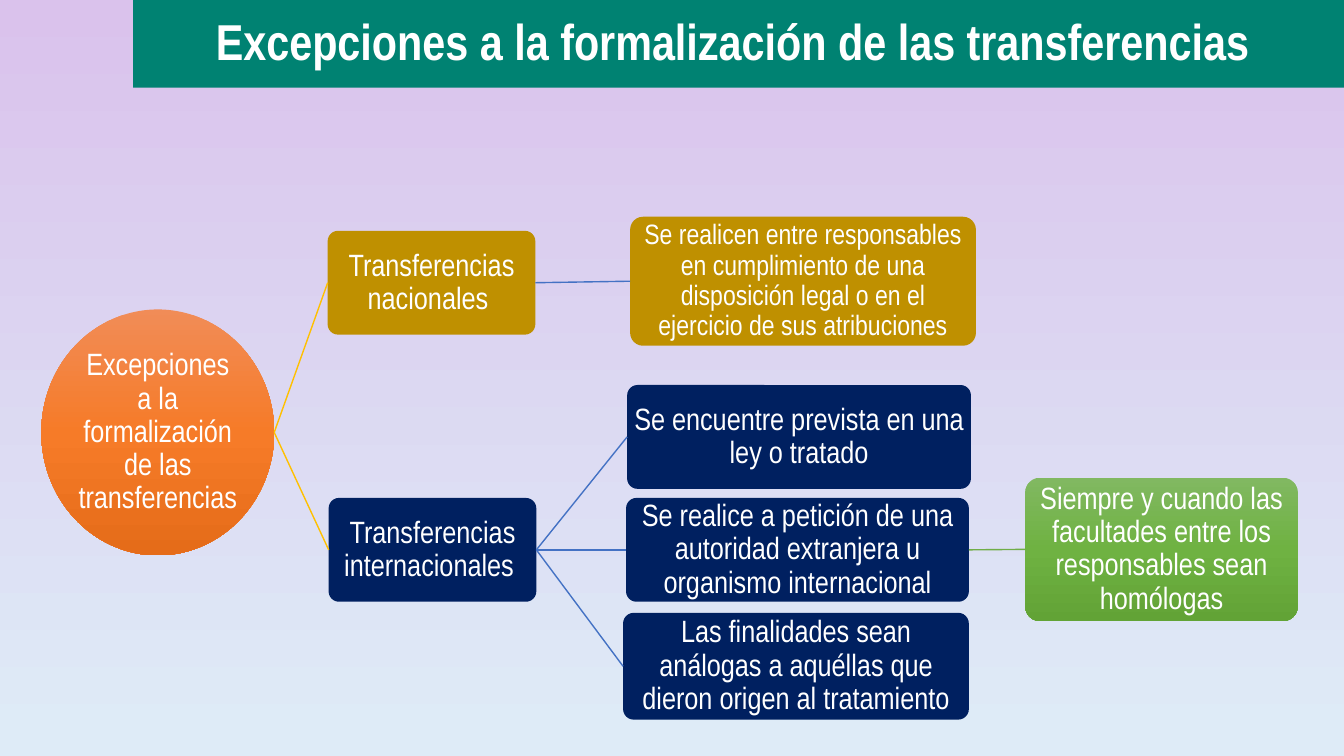
"""Build the slide on exceptions to formalising data transfers."""
import copy

import pptx
import pptx.dml.color
import pptx.enum.shapes
import pptx.enum.text
import pptx.util
from lxml import etree
from pptx.oxml.ns import qn

Inches = pptx.util.Inches
SHAPE = pptx.enum.shapes.MSO_SHAPE
COLORS = {
    "white": "FFFFFF", "teal": "008272", "gold": "BF9000", "navy": "002060",
    "yellow": "FFC000", "blue": "4472C4", "green": "70AD47",
}
GRADIENTS = {
    "sky": [(0, "DAC2EC"), (0.98, "DEEBF7")],
    "orange": [(0, "F18C57"), (0.5, "F67B28"), (1, "E56C19")],
    "leaf": [(0, "81B861"), (0.5, "6FB242"), (1, "62A336")],
}


class Diagram:
    """Hold the text style and the current slide."""

    def __init__(self, prs, font):
        self.font = font
        self.s = prs.slides.add_slide(prs.slide_layouts[5])

    def rgb(self, name):
        """Return the named colour."""
        return pptx.dml.color.RGBColor.from_string(COLORS[name])

    def paint(self, fill, element, name):
        """Fill with a plain colour or a top-to-bottom gradient."""
        if name in COLORS:
            fill.solid()
            fill.fore_color.rgb = self.rgb(name)
            return
        fill.gradient()
        fill.gradient_angle = 270
        stops = GRADIENTS[name]
        gs_list = element.xpath(".//a:gsLst")[0]
        while len(gs_list) < len(stops):
            gs_list.append(copy.deepcopy(gs_list[-1]))
        for stop, (position, color) in zip(fill.gradient_stops, stops):
            stop.position = position
            stop.color.rgb = pptx.dml.color.RGBColor.from_string(color)

    def background(self, name):
        """Paint the slide background."""
        self.paint(self.s.background.fill, self.s.element, name)

    def label(self, sp, text, size, bold=False):
        """Set centred white text in a shape."""
        tf = sp.text_frame
        tf.word_wrap = True
        tf.auto_size = pptx.enum.text.MSO_AUTO_SIZE.NONE
        tf.vertical_anchor = pptx.enum.text.MSO_ANCHOR.MIDDLE
        p = tf.paragraphs[0]
        p.text = text
        p.alignment = pptx.enum.text.PP_ALIGN.CENTER
        p.line_spacing = 0.9
        p.font.name = self.font
        p.font.size = pptx.util.Pt(size)
        p.font.bold = bold
        p.font.color.rgb = self.rgb("white")

    def title(self, text, box, color):
        """Place and format the title placeholder."""
        sp = self.s.shapes.title
        sp.left, sp.top, sp.width, sp.height = map(Inches, box)
        self.paint(sp.fill, sp.element, color)
        self.label(sp, text, 36, bold=True)

    def node(self, text, box, color, size=22, shape=SHAPE.ROUNDED_RECTANGLE):
        """Add a filled shape with its text."""
        sp = self.s.shapes.add_shape(shape, *map(Inches, box))
        sp.shadow.inherit = False
        sp.line.fill.background()
        if shape == SHAPE.ROUNDED_RECTANGLE:
            sp.adjustments[0] = 0.1
        self.paint(sp.fill, sp.element, color)
        tf = sp.text_frame
        tf.margin_left = tf.margin_right = Inches(0.02)
        tf.margin_top = tf.margin_bottom = Inches(0.02)
        self.label(sp, text, size)
        return sp

    def link(self, start, end, color):
        """Join the right side of one node to the left side of another."""
        line = self.s.shapes.add_connector(
            pptx.enum.shapes.MSO_CONNECTOR.STRAIGHT,
            start.left + start.width, start.top + start.height // 2,
            end.left, end.top + end.height // 2)
        if start.auto_shape_type == SHAPE.ROUNDED_RECTANGLE:
            line.begin_connect(start, 3)
        line.end_connect(end, 1)
        line.line.color.rgb = self.rgb(color)
        line.line.width = pptx.util.Pt(1)
        etree.SubElement(line.element.spPr, qn("a:effectLst"))


def main():
    """Draw the tree and save it."""
    prs = pptx.Presentation()
    prs.slide_width, prs.slide_height = Inches(13.33), Inches(7.5)
    d = Diagram(prs, "Arial Narrow")
    d.background("sky")
    d.title("Excepciones a la formalización de las transferencias ",
            (1.32, 0, 12.01, 0.87), "teal")

    root = d.node("Excepciones a la formalización de las transferencias",
                  (0.41, 3.07, 2.31, 2.44), "orange", shape=SHAPE.OVAL)
    national = d.node("Transferencias nacionales ",
                      (3.25, 2.29, 2.06, 1.03), "gold")
    legal = d.node("Se realicen entre responsables en cumplimiento de una "
                   "disposición legal o en el ejercicio de sus atribuciones",
                   (6.25, 2.15, 3.43, 1.28), "gold", size=20)
    foreign = d.node("Transferencias internacionales ",
                     (3.26, 4.94, 2.06, 1.03), "navy")
    treaty = d.node("Se encuentre prevista en una ley o tratado",
                    (6.22, 3.82, 3.41, 1.03), "navy")
    request = d.node("Se realice a petición de una autoridad extranjera u "
                     "organismo internacional",
                     (6.21, 4.94, 3.4, 1.03), "navy")
    condition = d.node("Siempre y cuando las facultades entre los "
                       "responsables sean homólogas",
                       (10.17, 4.74, 2.7, 1.42), "leaf")
    purpose = d.node("Las finalidades sean análogas a aquéllas que dieron "
                     "origen al tratamiento",
                     (6.18, 6.08, 3.43, 1.06), "navy")

    for branch in (national, foreign):
        d.link(root, branch, "yellow")
    d.link(national, legal, "blue")
    for case in (treaty, request, purpose):
        d.link(foreign, case, "blue")
    d.link(request, condition, "green")
    prs.save("out.pptx")


if __name__ == "__main__":
    main()
